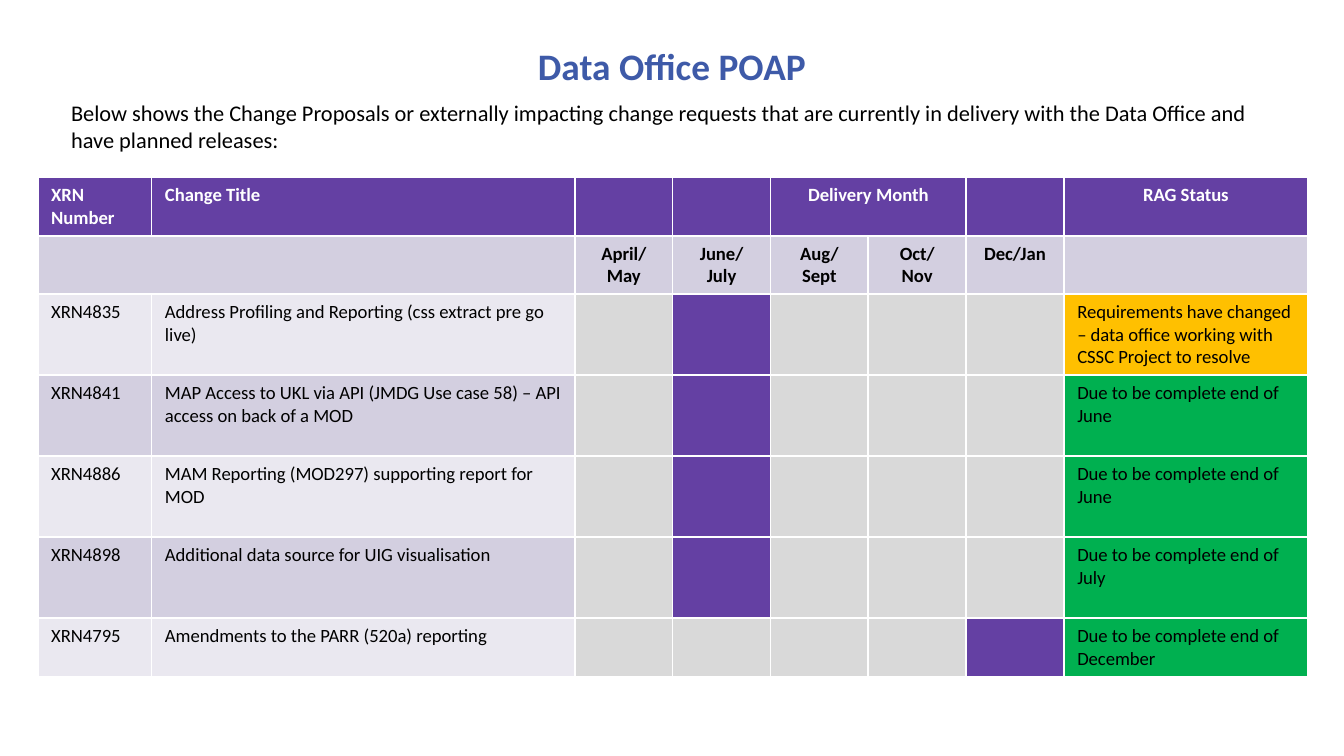
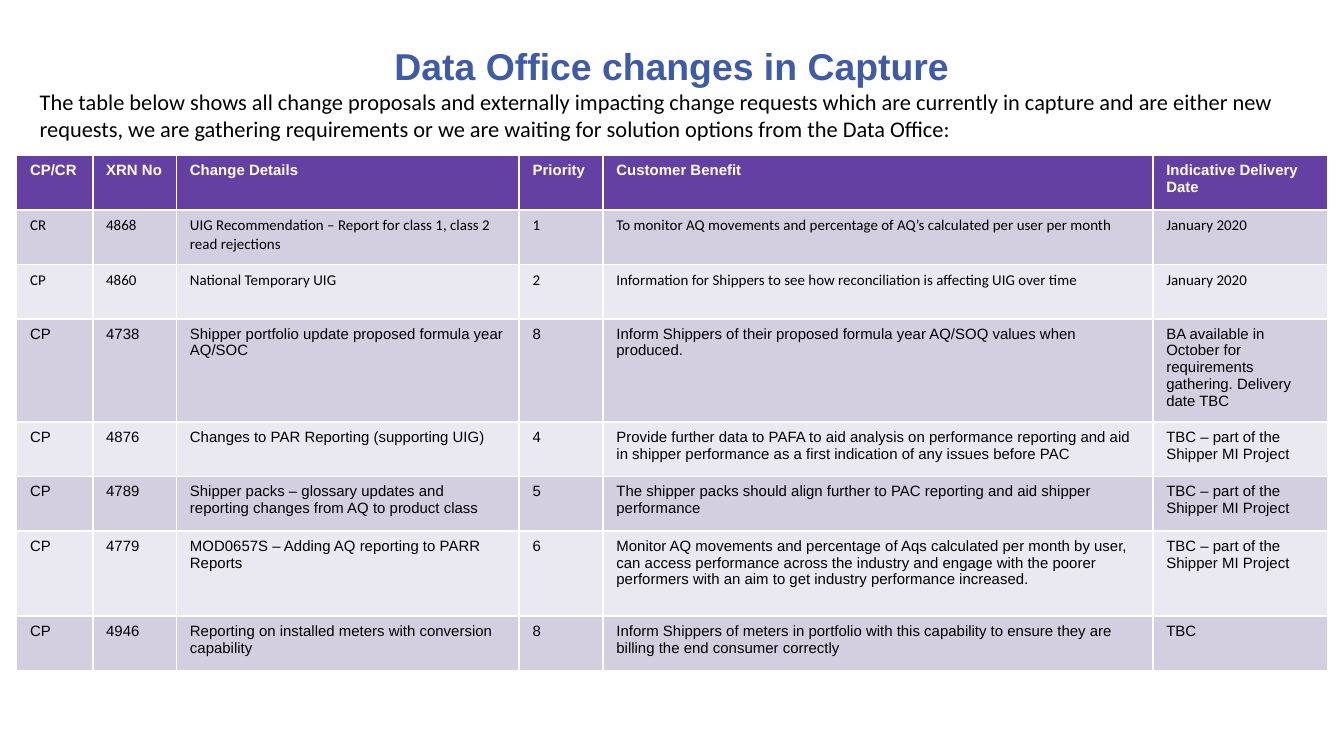
"""Build the two Data Office slides: the plan on a page and the changes in capture."""
from pptx import Presentation
from pptx.dml.color import RGBColor
from pptx.enum import text
from pptx.util import Pt

THEME = {
    "title": RGBColor.from_string("3E5AA8"),
    "purple": RGBColor.from_string("6440A3"),
    "band_dark": RGBColor.from_string("D3CFE0"),
    "band_light": RGBColor.from_string("EAE8F0"),
    "idle": RGBColor.from_string("D9D9D9"),
    "amber": RGBColor.from_string("FFC000"),
    "green": RGBColor.from_string("00B050"),
    "white": RGBColor.from_string("FFFFFF"),
    "black": RGBColor.from_string("000000"),
    "title_size": 20, "intro_size": 12, "plan_size": 10, "capture_size": 8,
}
LEFT, CENTER = text.PP_ALIGN.LEFT, text.PP_ALIGN.CENTER


def write(frame, content, font_name, size, color, bold=False, alignment=LEFT):
    """Fill a text frame, one paragraph per line, in a single format."""
    frame.word_wrap = True
    frame.text = content
    formats = {"name": font_name, "size": Pt(THEME[size]), "bold": bold}
    for paragraph in frame.paragraphs:
        paragraph.alignment = alignment
        for run in paragraph.runs:
            for attribute, value in formats.items():
                setattr(run.font, attribute, value)
            run.font.color.rgb = THEME[color]


def add_table(slide, left, top, widths, heights):
    """Add a table with a purple header row and banded body rows."""
    table = slide.shapes.add_table(len(heights), len(widths), Pt(left), Pt(top),
                                   Pt(sum(widths)), Pt(sum(heights))).table
    table.horz_banding = False
    for column, width in zip(table.columns, widths):
        column.width = Pt(width)
    for index, (row, height) in enumerate(zip(table.rows, heights)):
        row.height = Pt(height)
        fill = "purple" if index == 0 else "band_dark" if index % 2 else "band_light"
        for cell in row.cells:
            cell.fill.solid()
            cell.fill.fore_color.rgb = THEME[fill]
    return table


presentation = Presentation()
presentation.slide_width, presentation.slide_height = Pt(720), Pt(405)

pages = [
    ("Data Office POAP", "Calibri", (31, 49.7, 657.4),
     "Below shows the Change Proposals or externally impacting change requests that are "
     "currently in delivery with the Data Office and have planned releases:"),
    ("Data Office changes in Capture", "Arial", (14.2, 43.9, 692),
     "The table below shows all change proposals and externally impacting change requests "
     "which are currently in capture and are either new requests, we are gathering "
     "requirements or we are waiting for solution options from the Data Office:"),
]
slides = []
for heading, font_name, (left, top, width), intro in pages:
    slide = presentation.slides.add_slide(presentation.slide_layouts[5])
    title = slide.shapes.title
    title.left, title.top, title.width, title.height = Pt(36), Pt(10), Pt(648), Pt(50.4)
    title.text_frame.vertical_anchor = text.MSO_ANCHOR.MIDDLE
    write(title.text_frame, heading, font_name, "title_size", "title", True, CENTER)
    intro_box = slide.shapes.add_textbox(Pt(left), Pt(top), Pt(width), Pt(36))
    write(intro_box.text_frame, intro, "Calibri", "intro_size", "black")
    slides.append(slide)
plan_slide, capture_slide = slides

months = ["April/\nMay", "June/\nJuly", "Aug/\nSept", "Oct/\nNov", "Dec/Jan"]
plan_changes = [
    ("XRN4835", "Address Profiling and Reporting (css extract pre go live)", 1, "amber",
     "Requirements have changed – data office working with CSSC Project to resolve"),
    ("XRN4841", "MAP Access to UKL via API (JMDG Use case 58) – API access on back of a MOD",
     1, "green", "Due to be complete end of June"),
    ("XRN4886", "MAM Reporting (MOD297) supporting report for MOD",
     1, "green", "Due to be complete end of June"),
    ("XRN4898", "Additional data source for UIG visualisation",
     1, "green", "Due to be complete end of July"),
    ("XRN4795", "Amendments to the PARR (520a) reporting",
     4, "green", "Due to be complete end of December"),
]
FIRST_MONTH, STATUS = 2, 7
plan = add_table(plan_slide, 20.2, 95.1, [61, 226.8] + [52.4] * 5 + [130.8],
                 [30.6, 31] + [43.4] * 4 + [30.6])
plan.cell(0, 4).merge(plan.cell(0, 5))
plan.cell(1, 0).merge(plan.cell(1, 1))
for column, label, alignment in [(0, "XRN Number", LEFT), (1, "Change Title", LEFT),
                                 (4, "Delivery Month", CENTER), (STATUS, "RAG Status", CENTER)]:
    write(plan.cell(0, column).text_frame, label, "Calibri", "plan_size", "white", True, alignment)
for column, month in enumerate(months, FIRST_MONTH):
    write(plan.cell(1, column).text_frame, month, "Calibri", "plan_size", "black", True, CENTER)
for row, (number, change, delivery, rag, status) in enumerate(plan_changes, 2):
    for column, content in [(0, number), (1, change), (STATUS, status)]:
        write(plan.cell(row, column).text_frame, content, "Calibri", "plan_size", "black")
    for month in range(len(months)):
        month_fill = "purple" if month == delivery else "idle"
        plan.cell(row, FIRST_MONTH + month).fill.fore_color.rgb = THEME[month_fill]
    plan.cell(row, STATUS).fill.fore_color.rgb = THEME[rag]

capture_rows = [
    ("CP/CR", "XRN No", "Change Details", "Priority", "Customer Benefit",
     "Indicative Delivery Date"),
    ("CR", "4868", "UIG Recommendation – Report for class 1, class 2 read rejections", "1",
     "To monitor AQ movements and percentage of AQ’s calculated per user per month",
     "January 2020"),
    ("CP", "4860", "National Temporary UIG", "2",
     "Information for Shippers to see how reconciliation is affecting UIG over time",
     "January 2020"),
    ("CP", "4738", "Shipper portfolio update proposed formula year AQ/SOC", "8",
     "Inform Shippers of their proposed formula year AQ/SOQ values when produced.",
     "BA available in October for requirements gathering. Delivery date TBC"),
    ("CP", "4876", "Changes to PAR Reporting (supporting UIG)", "4",
     "Provide further data to PAFA to aid analysis on performance reporting and aid in "
     "shipper performance as a first indication of any issues before PAC",
     "TBC – part of the Shipper MI Project"),
    ("CP", "4789", "Shipper packs – glossary updates and reporting changes from AQ to "
     "product class", "5",
     "The shipper packs should align further to PAC reporting and aid shipper performance",
     "TBC – part of the Shipper MI Project"),
    ("CP", "4779", "MOD0657S – Adding AQ reporting to PARR Reports", "6",
     "Monitor AQ movements and percentage of Aqs calculated per month by user, can access "
     "performance across the industry and engage with the poorer performers with an aim to "
     "get industry performance increased.",
     "TBC – part of the Shipper MI Project"),
    ("CP", "4946", "Reporting on installed meters with conversion capability", "8",
     "Inform Shippers of meters in portfolio with this capability to ensure they are "
     "billing the end consumer correctly", "TBC"),
]
capture = add_table(capture_slide, 8.9, 83.2, [40.8, 44.9, 183.6, 44.9, 294.6, 93.5],
                    [29.2, 29.2, 29.2, 55.2, 29.2, 29.2, 45.8, 29.2])
for row, values in enumerate(capture_rows):
    font_name = "Calibri" if row in (1, 2) else "Arial"
    color = "black" if row else "white"
    for column, content in enumerate(values):
        write(capture.cell(row, column).text_frame, content, font_name, "capture_size",
              color, row == 0)

presentation.save("out.pptx")
